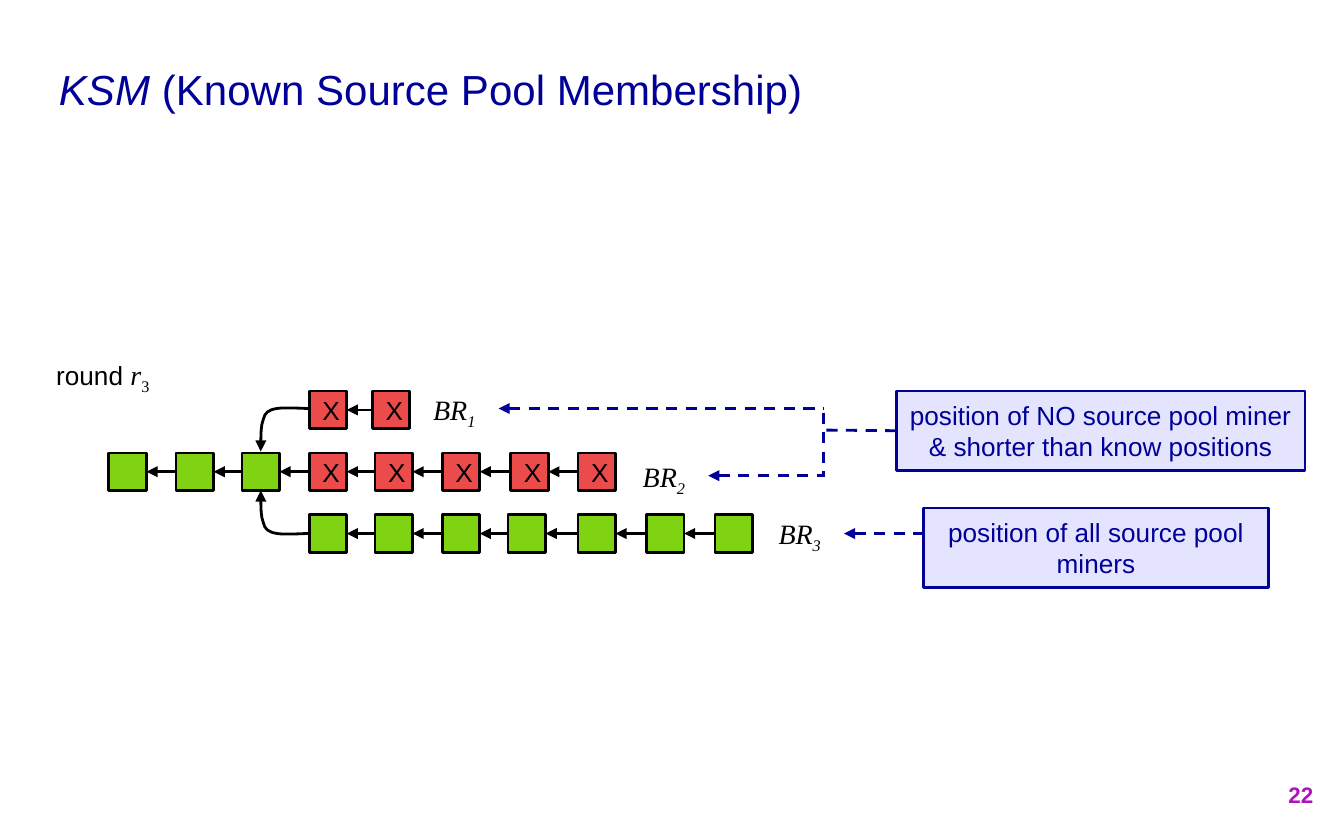
"""Build the slide on known source pool membership with its three branches."""
from lxml import etree
from pptx import Presentation
from pptx.dml.color import RGBColor
from pptx.enum import dml, shapes, text
from pptx.oxml import ns
from pptx.util import Inches, Pt

NAVY, BLACK, PALE, PURPLE = "000099", "000000", "E4E4FF", "AD13BF"
GREEN, RED = "80D313", "EB4B4B"
SIDE = 0.28

MATH = {"font": "Times New Roman", "size": 15, "italic": True}
SUBSCRIPT = {**MATH, "baseline": -25000}
TITLE = [[("KSM ", {"italic": True}), ("(Known Source Pool Membership)", {})]]
ROUND = [[("round ", {}), ("r", MATH), ("3", {**SUBSCRIPT, "italic": False})]]
CALLOUTS = [
    ((6.67, 2.91, 3.04, 0.59),
     ["position of NO source pool miner & shorter than know positions"]),
    ((6.87, 3.78, 2.57, 0.59), ["position of all source pool", "miners"]),
]
BRANCHES = [
    {"top": 2.91, "lefts": [2.3, 2.77], "greens": 0, "label": (3.05, 2.82)},
    {"top": 3.37, "lefts": [0.81, 1.31, 1.8, 2.3, 2.79, 3.29, 3.8, 4.3],
     "greens": 3, "label": (4.61, 3.32)},
    {"top": 3.83, "lefts": [2.3, 2.79, 3.29, 3.78, 4.3, 4.81, 5.32],
     "greens": 7, "label": (5.62, 3.74)},
]
POINTERS = [
    ((3.71, 3.04), (6.13, 3.04), "headEnd"),
    ((5.27, 3.54), (6.14, 3.54), "headEnd"),
    ((6.13, 3.07), (6.13, 3.54), None),
    ((6.28, 3.97), (6.87, 3.97), "headEnd"),
]
FORKS = [((2.3, 3.04), 1), ((2.3, 3.97), -1)]
BEND = [(-0.04, 0), (-0.18, -0.01), (-0.24, 0), (-0.3, 0.01), (-0.33, 0.03),
        (-0.34, 0.08), (-0.36, 0.13), (-0.36, 0.28), (-0.36, 0.32)]

prs = Presentation()
prs.slide_width, prs.slide_height = Inches(10), Inches(6.25)
slide = prs.slides.add_slide(prs.slide_layouts[6])


def rgb(value):
    return RGBColor.from_string(value)


def write(holder, paragraphs, align="LEFT", anchor="MIDDLE", **base):
    frame = holder.text_frame
    frame.word_wrap = True
    frame.vertical_anchor = text.MSO_ANCHOR[anchor]
    frame.margin_left = frame.margin_right = Inches(0.1)
    frame.margin_top = frame.margin_bottom = Inches(0.1)
    for index, runs in enumerate(paragraphs):
        paragraph = frame.add_paragraph() if index else frame.paragraphs[0]
        paragraph.alignment = text.PP_ALIGN[align]
        for words, changes in [(runs, {})] if isinstance(runs, str) else runs:
            style = {"font": "Arial", "size": 14, "color": BLACK, **base, **changes}
            run = paragraph.add_run()
            run.text = words
            run.font.name, run.font.size = style["font"], Pt(style["size"])
            run.font.color.rgb = rgb(style["color"])
            run.font.bold = style.get("bold")
            run.font.italic = style.get("italic")
            if "baseline" in style:
                run._r.get_or_add_rPr().set("baseline", str(style["baseline"]))


def write_box(place, paragraphs, **style):
    write(slide.shapes.add_textbox(*map(Inches, place)), paragraphs, **style)


def add_rect(place, fill, line):
    rect = slide.shapes.add_shape(shapes.MSO_SHAPE.RECTANGLE, *map(Inches, place))
    rect.shadow.inherit = False
    rect.fill.solid()
    rect.fill.fore_color.rgb = rgb(fill)
    rect.line.color.rgb, rect.line.width = rgb(line), Pt(1.5)
    return rect


def style_line(stroke, color, arrow=None, dashed=False):
    stroke.line.color.rgb, stroke.line.width = rgb(color), Pt(1.5)
    if dashed:
        stroke.line.dash_style = dml.MSO_LINE.DASH
    if arrow:
        outline = stroke.line._get_or_add_ln()
        etree.SubElement(outline, ns.qn(f"a:{arrow}"), type="triangle")


def connect(start, end, *style, **options):
    link = slide.shapes.add_connector(
        shapes.MSO_CONNECTOR.STRAIGHT, *map(Inches, (*start, *end)))
    style_line(link, *style, **options)
    etree.SubElement(link._element.spPr, ns.qn("a:effectLst"))
    return link


def add_fork(start, direction):
    x, y = start
    builder = slide.shapes.build_freeform(Inches(x), Inches(y))
    builder.add_line_segments(
        [(Inches(x + dx), Inches(y + direction * dy)) for dx, dy in BEND], close=False)
    fork = builder.convert_to_shape()
    fork.shadow.inherit = False
    fork.fill.background()
    style_line(fork, BLACK, "tailEnd")
    segments = list(fork._element.iter(ns.qn("a:lnTo")))
    for first in range(0, len(segments), 3):
        curve = etree.Element(ns.qn("a:cubicBezTo"))
        segments[first].addprevious(curve)
        for segment in segments[first:first + 3]:
            curve.append(segment[0])
            segment.getparent().remove(segment)


write_box((0.34, 0.31, 9.32, 0.7), TITLE, size=22.5, color=NAVY)
write_box((9.27, 5.67, 0.6, 0.48), ["22"], align="RIGHT", size=12, color=PURPLE, bold=True)
write_box((0.11, 2.56, 1.31, 0.45), ROUND, align="CENTER", anchor="TOP")

callouts = []
for place, lines in CALLOUTS:
    callouts.append(add_rect(place, PALE, NAVY))
    write(callouts[-1], lines, align="CENTER", color=NAVY)
for start, end, arrow in POINTERS:
    connect(start, end, NAVY, arrow, dashed=True)
connect((6.67, 3.2), (6.13, 3.2), NAVY, dashed=True).begin_connect(callouts[0], 1)

for number, branch in enumerate(BRANCHES, 1):
    blocks = []
    middle = branch["top"] + SIDE / 2
    for index, left in enumerate(branch["lefts"]):
        kept = index < branch["greens"]
        block = add_rect((left, branch["top"], SIDE, SIDE), GREEN if kept else RED, BLACK)
        if not kept:
            write(block, ["X"])
        if blocks:
            link = connect((left, middle), (branch["lefts"][index - 1] + SIDE, middle),
                           BLACK, "tailEnd")
            link.begin_connect(block, 1)
            link.end_connect(blocks[-1], 3)
        blocks.append(block)
    write_box((*branch["label"], 0.66, 0.45), [[("BR", MATH), (str(number), SUBSCRIPT)]],
              align="CENTER", anchor="TOP")
for start, direction in FORKS:
    add_fork(start, direction)

prs.save("out.pptx")
